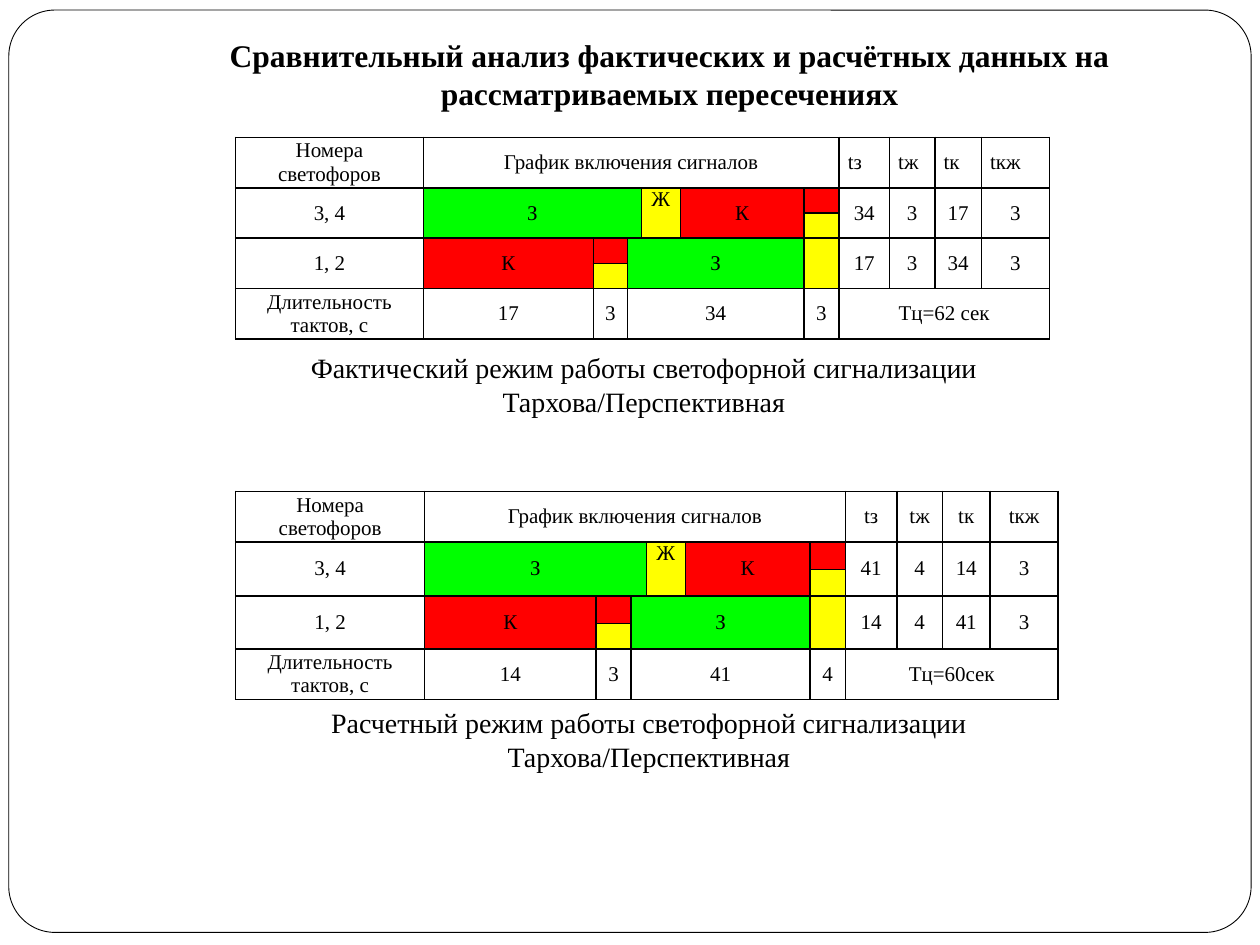
from dataclasses import dataclass
from typing import NamedTuple

from lxml import etree
from pptx import Presentation
from pptx.dml.color import RGBColor
from pptx.enum.shapes import MSO_SHAPE
from pptx.enum.text import MSO_ANCHOR, PP_ALIGN
from pptx.oxml.ns import qn
from pptx.util import Inches, Pt

CENTER, LEFT = PP_ALIGN.CENTER, PP_ALIGN.LEFT
MIDDLE, TOP = MSO_ANCHOR.MIDDLE, MSO_ANCHOR.TOP
ROUNDED = MSO_SHAPE.ROUNDED_RECTANGLE
FONT = "Times New Roman"
BLACK, WHITE = "000000", "FFFFFF"
GREEN, YELLOW, RED = "00FF00", "FFFF00", "FF0000"

# The slide is a grid of 100 columns by 75 rows
GRID = Inches(0.1)
SLIDE_COLUMNS, SLIDE_ROWS = 100, 75


class Area(NamedTuple):
    left: float
    top: float
    width: float
    height: float

    def lengths(self) -> list[int]:
        return [units(value) for value in self]


class Block(NamedTuple):
    """A table cell with its place and span."""
    row: int
    column: int
    text: str = ""
    fill: str | None = None
    rows: int = 1
    columns: int = 1
    align: int = CENTER
    anchor: int = MIDDLE


@dataclass
class SignalPlan:
    area: Area
    column_widths: list[float]
    row_heights: list[float]
    main_times: list[int]
    cross_times: list[int]
    phases: list[int]
    cycle: str
    header_align: int
    caption_area: Area
    caption: list[str]


PLANS = [
    SignalPlan(
        Area(18.7, 10.9, 64.8, 16),
        [14.9, 13.5, 2.7, 1.1, 3.1, 9.8, 2.8, 4, 3.6, 3.7, 5.4],
        [4, 2, 2, 2, 2, 4],
        [34, 3, 17, 3], [17, 3, 34, 3], [17, 3, 34, 3], "Tц=62 сек", LEFT,
        Area(18.7, 27.3, 64.8, 6.4),
        ["Фактический режим работы светофорной сигнализации",
         "Тархова/Перспективная"]),
    SignalPlan(
        Area(18.7, 39, 65.3, 16.5),
        [15, 13.6, 2.8, 1.2, 3.1, 9.9, 2.8, 4.1, 3.6, 3.8, 5.4],
        [4, 2.2, 2.1, 2.2, 2, 4],
        [41, 4, 14, 3], [14, 4, 41, 3], [14, 3, 41, 4], "Tц=60сек", CENTER,
        Area(18.7, 55.5, 65.6, 6.4),
        ["Расчетный режим работы светофорной сигнализации Тархова/Перспективная"]),
]


def units(value: float) -> int:
    return round(value * GRID)


def color(value: str) -> RGBColor:
    return RGBColor.from_string(value)


def write(frame, lines: list[str], size: float, bold: bool = False,
          align: int = CENTER) -> None:
    frame.word_wrap = True
    frame.text = "\n".join(lines)
    for para in frame.paragraphs:
        para.alignment = align
        para.font.name, para.font.size, para.font.bold = FONT, Pt(size), bold
        para.font.color.rgb = color(BLACK)


def outline_cell(cell) -> None:
    properties = cell._tc.get_or_add_tcPr()
    for index, side in enumerate(("a:lnL", "a:lnR", "a:lnT", "a:lnB")):
        line = etree.Element(qn(side), w=str(Pt(1)))
        fill = etree.SubElement(line, qn("a:solidFill"))
        etree.SubElement(fill, qn("a:srgbClr"), val=BLACK)
        properties.insert(index, line)


def prepare_cell(cell) -> None:
    """Clear the table style and keep an empty cell from stretching its row."""
    cell.margin_left = cell.margin_right = Inches(0.07)
    cell.margin_top = cell.margin_bottom = 0
    cell.fill.background()
    outline_cell(cell)
    para = cell.text_frame.paragraphs[0]
    etree.SubElement(para._p, qn("a:endParaRPr"), sz="800")


def plan_blocks(plan: SignalPlan) -> list[Block]:
    blocks = [
        Block(0, 0, "Номера светофоров"),
        Block(0, 1, "График включения сигналов", columns=6),
        # Signals of lights 3, 4
        Block(1, 0, "3, 4", rows=2),
        Block(1, 1, "З", GREEN, 2, 3),
        Block(1, 4, "Ж", YELLOW, 2, anchor=TOP),
        Block(1, 5, "К", RED, 2),
        Block(1, 6, fill=RED),
        Block(2, 6, fill=YELLOW),
        # Signals of lights 1, 2
        Block(3, 0, "1, 2", rows=2),
        Block(3, 1, "К", RED, 2),
        Block(3, 2, fill=RED),
        Block(4, 2, fill=YELLOW),
        Block(3, 3, "З", GREEN, 2, 3),
        Block(3, 6, fill=YELLOW, rows=2),
        # Phase lengths
        Block(5, 0, "Длительность тактов, с"),
        Block(5, 7, plan.cycle, columns=4),
    ]
    for column, span, phase in zip((1, 2, 3, 6), (1, 1, 3, 1), plan.phases):
        blocks.append(Block(5, column, str(phase), columns=span))
    headers = ("tз", "tж", "tк", "tкж")
    times = zip(headers, plan.main_times, plan.cross_times)
    for column, (header, main, cross) in enumerate(times, start=7):
        blocks += [Block(0, column, header, align=plan.header_align),
                   Block(1, column, str(main), rows=2),
                   Block(3, column, str(cross), rows=2)]
    return blocks


def draw_block(table, block: Block) -> None:
    cell = table.cell(block.row, block.column)
    if block.rows * block.columns > 1:
        cell.merge(table.cell(block.row + block.rows - 1,
                              block.column + block.columns - 1))
    cell.vertical_anchor = block.anchor
    if block.fill:
        cell.fill.solid()
        cell.fill.fore_color.rgb = color(block.fill)
    if block.text:
        write(cell.text_frame, [block.text], 12, align=block.align)


def draw_plan(page, plan: SignalPlan) -> None:
    table = page.shapes.add_table(len(plan.row_heights), len(plan.column_widths),
                                  *plan.area.lengths()).table
    table.first_row = table.horz_banding = False
    for column, width in zip(table.columns, plan.column_widths):
        column.width = units(width)
    for row, height in zip(table.rows, plan.row_heights):
        row.height = units(height)
    for cell in table.iter_cells():
        prepare_cell(cell)
    for block in plan_blocks(plan):
        draw_block(table, block)

    box = page.shapes.add_textbox(*plan.caption_area.lengths())
    box.text_frame.vertical_anchor = MIDDLE
    write(box.text_frame, plan.caption, 16)


def draw_frame(page, area: Area):
    frame = page.shapes.add_shape(ROUNDED, *area.lengths())
    frame.adjustments[0] = 0.05
    frame.shadow.inherit = False
    frame.fill.solid()
    frame.fill.fore_color.rgb = color(WHITE)
    frame.line.color.rgb = color(BLACK)
    frame.line.width = Pt(0.5)
    return frame


def main() -> None:
    deck = Presentation()
    deck.slide_width, deck.slide_height = units(SLIDE_COLUMNS), units(SLIDE_ROWS)
    page = deck.slides.add_slide(deck.slide_layouts.get_by_name("Title Only"))

    # Title, in front of the rounded frame
    title = page.shapes.title
    title.left, title.top, title.width, title.height = Area(14.1, 2.3, 78.1, 7.1).lengths()
    title.text_frame.vertical_anchor = MIDDLE
    write(title.text_frame,
          ["Сравнительный анализ фактических и расчётных данных на",
           "рассматриваемых пересечениях"], 18, bold=True)
    title.element.addprevious(draw_frame(page, Area(0.7, 0.8, 98.6, 73.2)).element)

    # Signal tables with their captions
    for plan in PLANS:
        draw_plan(page, plan)
    deck.save("out.pptx")


if __name__ == "__main__":
    main()
